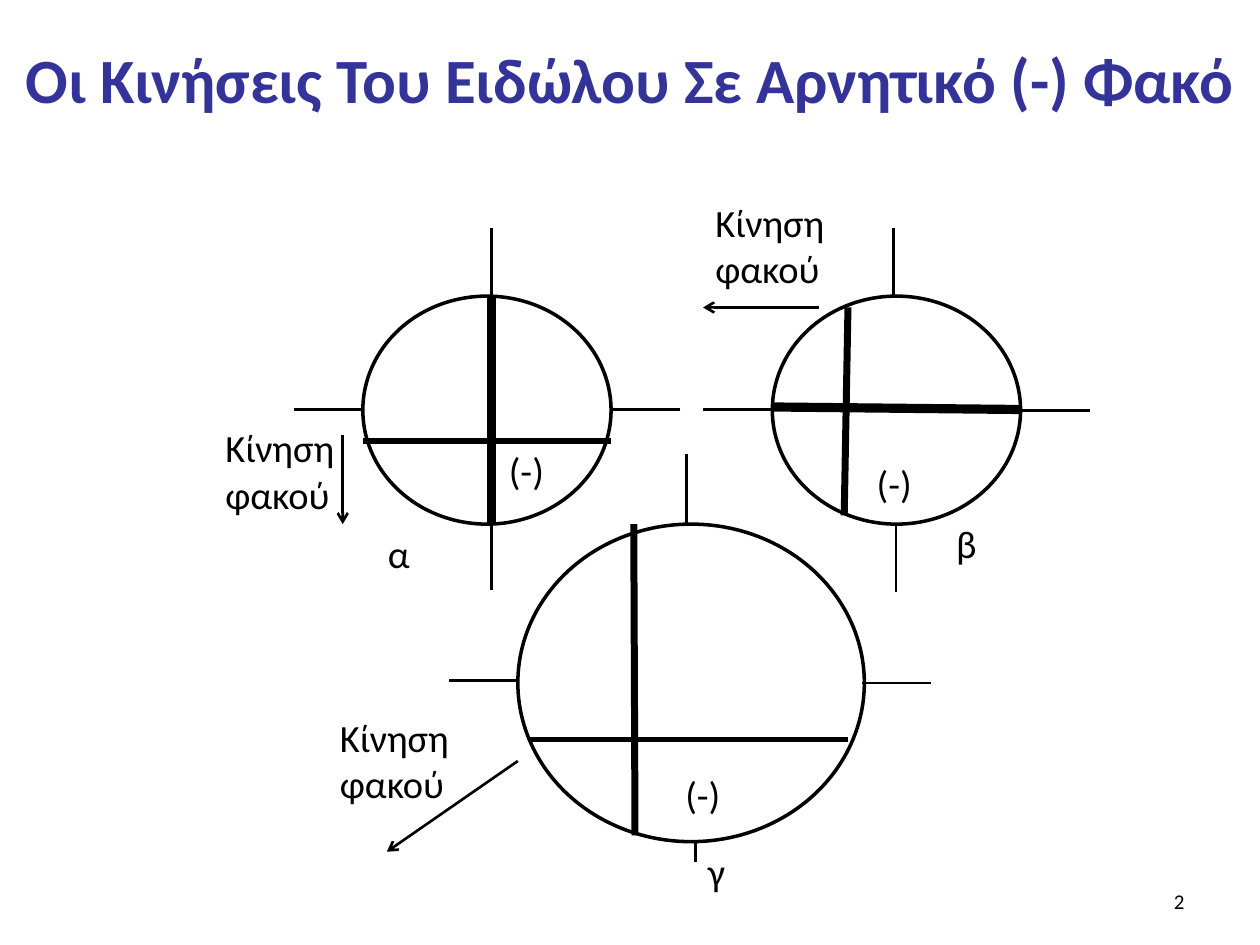
import pptx
import pptx.util
import pptx.dml.color
import pptx.enum.shapes
import pptx.enum.text
import pptx.oxml
import pptx.oxml.ns
from pptx.util import Inches

COLORS = {"title": "333399", "ink": "000000"}
FONT = "Calibri"
ALIGN = pptx.enum.text.PP_ALIGN
ANCHOR = pptx.enum.text.MSO_ANCHOR
AXIS_WIDTH = 1.5
MOTION = "Κίνηση φακού"

# Each lens: ellipse box, image bars (ends, width), outer axis ticks,
# arrow of the lens movement, and labels (text, left, top, width, height).
LENSES = [
    {
        "ellipse": (2.88, 2.35, 1.97, 1.81),
        "bars": [((3.9, 2.35, 3.9, 4.16), 5.25), ((2.88, 3.5, 4.85, 3.5), 4)],
        "ticks": [(3.9, 2.35, 3.9, 1.81), (3.9, 4.68, 3.9, 4.14),
                  (2.88, 3.25, 2.33, 3.25), (5.4, 3.25, 4.85, 3.25)],
        "arrow": (2.72, 3.45, 2.72, 4.16),
        "labels": [(MOTION, 1.69, 3.32, 1.3, 0.84),
                   ("α", 2.98, 4.16, 0.4, 0.47),
                   ("(-)", 3.94, 3.5, 0.59, 0.47)],
    },
    {
        "ellipse": (6.13, 2.35, 1.97, 1.81),
        "bars": [((6.13, 3.23, 8.1, 3.25), 5.25), ((6.73, 2.44, 6.7, 4.09), 4)],
        "ticks": [(8.65, 3.26, 8.1, 3.26), (6.13, 3.25, 5.58, 3.25),
                  (7.11, 4.7, 7.11, 4.16), (7.09, 2.35, 7.09, 1.81)],
        "arrow": (6.5, 2.44, 5.58, 2.44),
        "labels": [(MOTION, 5.58, 1.53, 1.3, 0.84),
                   ("β", 7.49, 4.08, 0.4, 0.47),
                   ("(-)", 6.86, 3.6, 0.59, 0.47)],
    },
    {
        "ellipse": (4.11, 4.16, 2.75, 2.52),
        "bars": [((4.21, 5.87, 6.73, 5.87), 3.25), ((5.03, 4.16, 5.04, 6.63), 4)],
        "ticks": [(7.39, 5.42, 6.84, 5.42), (4.11, 5.4, 3.56, 5.4),
                  (5.45, 4.15, 5.45, 3.6), (5.52, 6.84, 5.52, 6.69)],
        "arrow": (4.11, 6.04, 3.07, 6.76),
        "labels": [("γ", 5.52, 6.68, 0.4, 0.47),
                   (MOTION, 2.6, 5.62, 1.3, 0.84),
                   ("(-)", 5.34, 6.07, 0.59, 0.47)],
    },
]


class SlideBuilder:
    """Holds the slide, its diagram group and the shared style."""

    def __init__(self, slide):
        self.slide = slide
        self.diagram = slide.shapes.add_group_shape().shapes

    def color(self, name):
        return pptx.dml.color.RGBColor.from_string(COLORS[name])

    def fill_text(self, frame, text, size, color="ink", bold=False,
                  align=ALIGN.LEFT, anchor=ANCHOR.TOP):
        frame.word_wrap = True
        frame.vertical_anchor = anchor
        paragraph = frame.paragraphs[0]
        paragraph.alignment = align
        run = paragraph.add_run()
        run.text = text
        run.font.name = FONT
        run.font.size = pptx.util.Pt(size)
        run.font.bold = bold
        run.font.color.rgb = self.color(color)

    def title(self, text, left, top, width, height):
        title = self.slide.shapes.title
        title.left, title.top = Inches(left), Inches(top)
        title.width, title.height = Inches(width), Inches(height)
        self.fill_text(title.text_frame, text, 36, "title", True,
                       ALIGN.CENTER, ANCHOR.MIDDLE)

    def label(self, text, left, top, width, height):
        box = self.diagram.add_textbox(*map(Inches, (left, top, width, height)))
        self.fill_text(box.text_frame, text, 22)
        box.text_frame.auto_size = pptx.enum.text.MSO_AUTO_SIZE.SHAPE_TO_FIT_TEXT

    def page_number(self, text, left, top, width, height):
        box = self.slide.shapes.add_textbox(*map(Inches, (left, top, width, height)))
        self.fill_text(box.text_frame, text, 12, align=ALIGN.RIGHT,
                       anchor=ANCHOR.MIDDLE)

    def ellipse(self, box):
        shape = self.diagram.add_shape(
            pptx.enum.shapes.MSO_SHAPE.OVAL, *map(Inches, box))
        shape.shadow.inherit = False
        shape.fill.background()
        shape.line.color.rgb = self.color("ink")
        shape.line.width = pptx.util.Pt(2)

    def line(self, ends, width=AXIS_WIDTH, arrow=False):
        connector = self.diagram.add_connector(
            pptx.enum.shapes.MSO_CONNECTOR.STRAIGHT, *map(Inches, ends))
        connector.line.color.rgb = self.color("ink")
        connector.line.width = pptx.util.Pt(width)
        properties = connector._element.spPr
        if arrow:
            tail = pptx.oxml.parse_xml(
                f'<a:tailEnd {pptx.oxml.ns.nsdecls("a")} type="arrow"/>')
            properties.find(pptx.oxml.ns.qn("a:ln")).append(tail)
        properties.append(pptx.oxml.parse_xml(
            f'<a:effectLst {pptx.oxml.ns.nsdecls("a")}/>'))

    def lens(self, lens):
        self.ellipse(lens["ellipse"])
        for ends, width in lens["bars"]:
            self.line(ends, width)
        for ends in lens["ticks"]:
            self.line(ends)
        self.line(lens["arrow"], arrow=True)
        for label in lens["labels"]:
            self.label(*label)


def main():
    presentation = pptx.Presentation()
    presentation.slide_width = Inches(10)
    presentation.slide_height = Inches(7.5)
    title_only = presentation.slide_layouts[5]
    builder = SlideBuilder(presentation.slides.add_slide(title_only))
    builder.title("Οι Κινήσεις Του Ειδώλου Σε Αρνητικό (-) Φακό",
                  0, 0.13, 10, 0.99)
    for lens in LENSES:
        builder.lens(lens)
    builder.page_number("2", 7.17, 6.95, 2.33, 0.4)
    presentation.save("out.pptx")


if __name__ == "__main__":
    main()
